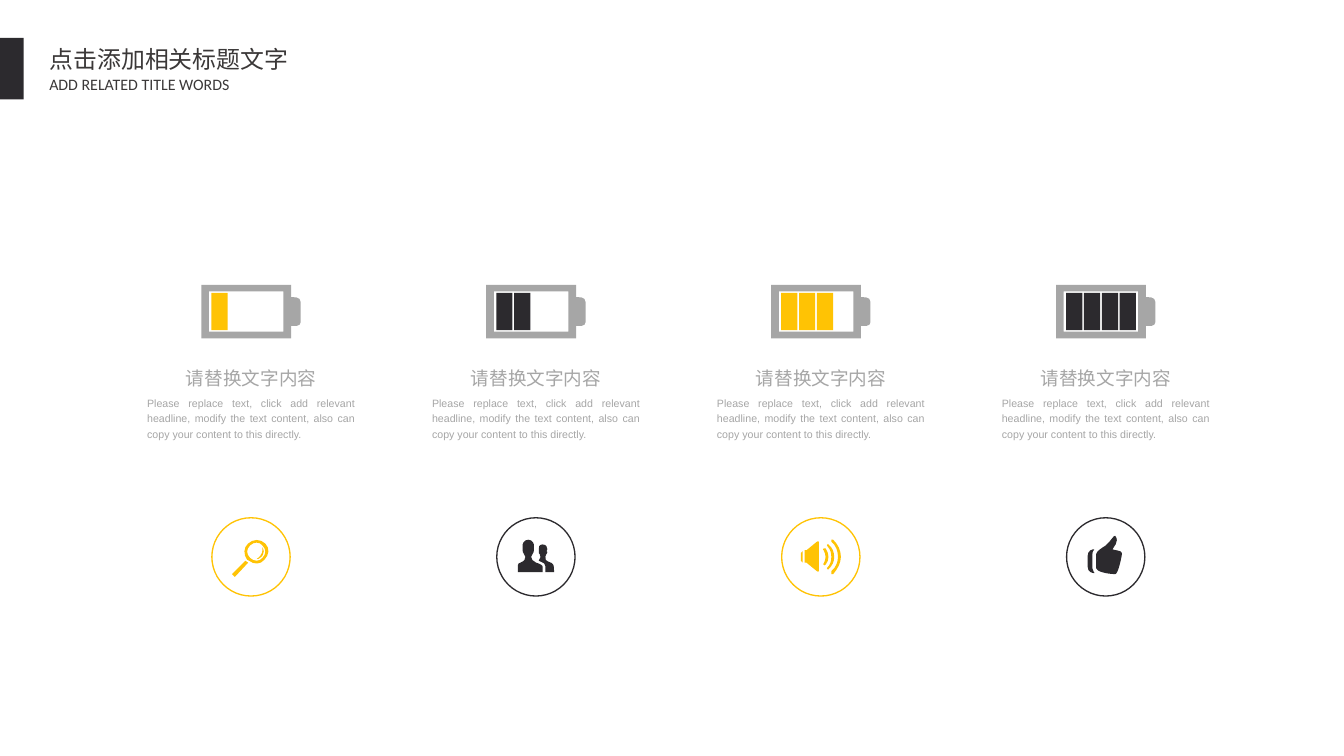
from dataclasses import dataclass

from lxml import etree
from pptx import Presentation
from pptx.dml.color import RGBColor
from pptx.enum import shapes as sh, text as tx
from pptx.oxml import ns
from pptx.util import Cm, Pt


@dataclass(frozen=True)
class Theme:
    dark: str = "2C2A2E"
    gold: str = "FFC304"
    grey: str = "A6A6A6"
    ink: str = "3B3838"
    han: str = "Noto Sans CJK SC"
    title: int = 18
    sub: int = 12
    head: int = 14
    body: int = 8


T = Theme()
LEFT, MID, JUST = tx.PP_ALIGN.LEFT, tx.PP_ALIGN.CENTER, tx.PP_ALIGN.JUSTIFY

# Rings: a start point, then lines (x, y) or curves (x1, y1, x2, y2, x, y).
# A part is a list of rings, an icon a list of parts.
CASE = [
    [(94, 13), (94, 0), (0, 0), (0, 56), (94, 56), (94, 43), (97, 43, 104, 44, 104, 39),
     (104, 18), (104, 12, 96, 13, 94, 13)],
    [(86, 49), (8, 49), (8, 7), (86, 7)],
]
SEARCH = [
    # lens, handle, glint
    [[(56, 27), (51, 22, 43, 22, 38, 27), (33, 31, 33, 39, 37, 44), (38, 45, 38, 45, 39, 45),
      (44, 49, 51, 49, 55, 44), (60, 39, 61, 32, 56, 27)],
     [(53, 42), (50, 46, 44, 46, 40, 42), (36, 38, 36, 33, 40, 29),
      (44, 25, 50, 25, 53, 29), (57, 33, 57, 38, 53, 42)]],
    [[(21, 59), (24, 62), (38, 47), (35, 45)]],
    [[(53, 31), (54, 40, 47, 43, 47, 43), (49, 43), (58, 38, 53, 31, 53, 31)]],
]
PEOPLE = [[
    [(60, 57), (60, 57, 60, 49, 59, 49), (59, 48, 57, 47, 54, 46), (51, 45, 51, 44, 51, 41),
     (51, 40, 51, 41, 52, 38), (52, 37, 53, 38, 53, 36), (53, 35, 52, 35, 52, 35),
     (52, 35, 53, 34, 53, 33), (53, 31, 52, 28, 48, 28), (44, 28, 44, 31, 44, 33),
     (44, 36), (44, 38, 44, 37, 45, 38), (45, 41, 46, 40, 46, 41), (46, 43, 45, 44, 44, 45),
     (50, 48, 51, 48, 51, 51), (51, 57)],
    [(41, 47), (38, 45, 36, 44, 36, 41), (36, 39, 37, 40, 38, 37), (38, 36, 39, 37, 39, 34),
     (39, 29), (39, 28, 38, 23, 33, 23), (28, 23, 27, 28, 27, 29), (27, 34),
     (27, 37, 28, 36, 28, 37), (29, 40, 30, 39, 30, 41), (30, 44, 29, 45, 25, 47),
     (24, 47, 22, 48, 22, 50), (22, 57), (48, 57), (48, 57, 48, 53, 48, 51),
     (48, 50, 45, 48, 41, 47)],
]]
SOUND = [
    # cone, back, three waves
    [[(37, 25), (26, 34), (24, 34), (24, 47), (26, 47), (37, 56), (37, 56, 39, 57, 39, 56),
      (39, 25), (39, 24, 37, 25, 37, 25)]],
    [[(20, 37), (20, 45), (20, 46, 21, 46, 22, 47), (22, 35), (21, 36, 20, 36, 20, 37)]],
    [[(46, 32), (45, 32, 44, 32, 44, 32), (43, 33, 43, 34, 44, 34), (45, 36, 46, 39, 46, 41),
      (46, 43, 45, 46, 44, 48), (43, 48, 43, 49, 44, 49), (44, 50, 45, 50, 46, 49),
      (48, 47, 49, 44, 49, 41), (49, 38, 48, 35, 46, 32)]],
    [[(49, 28), (49, 27, 48, 27, 48, 28), (47, 28, 47, 29, 48, 30), (51, 33, 52, 37, 52, 41),
      (52, 45, 51, 49, 48, 52), (47, 52, 47, 53, 48, 54), (49, 54),
      (53, 50, 55, 46, 55, 41), (55, 36, 53, 31, 49, 28)]],
    [[(54, 23), (54, 23, 53, 23, 52, 23), (52, 24, 52, 24, 52, 25), (57, 29, 59, 35, 59, 41),
      (59, 46, 57, 52, 52, 56), (52, 57, 52, 58, 52, 59), (54, 59),
      (59, 53, 62, 47, 62, 41), (62, 34, 59, 28, 54, 23)]],
]
THUMB = [[
    [(48, 33), (48, 32, 56, 25, 51, 19), (50, 17, 46, 25, 41, 29), (38, 31, 31, 35, 31, 38),
     (31, 53), (31, 56, 42, 59, 51, 59), (54, 59, 58, 40, 58, 37), (58, 34, 49, 34, 48, 33)],
    [(29, 33), (27, 33, 22, 34, 22, 40), (22, 51), (22, 57, 27, 58, 29, 58),
     (30, 58, 27, 56, 27, 53), (27, 38), (27, 34, 30, 33, 29, 33)],
]]


def paint(shape, fill=None, line=None):
    shape.shadow.inherit = False
    for part, color in ((shape.fill, fill), (shape.line.fill, line)):
        if color:
            part.solid()
            part.fore_color.rgb = RGBColor.from_string(color)
        else:
            part.background()


def outline(group, x, y, unit, rings, color):
    pen = None
    for ring in rings:
        pts = [(x + s[k] * unit, y + s[k + 1] * unit)
               for s in ring for k in range(0, len(s), 2)]
        if pen:
            pen.move_to(*pts[0])
        else:
            pen = group.shapes.build_freeform(*pts[0])
        pen.add_line_segments(pts[1:], close=True)
    shape = pen.convert_to_shape()
    # join each run of three points into one curve
    steps = iter(list(shape._element.iter(ns.qn("a:lnTo"))))
    for seg in (s for ring in rings for s in ring[1:]):
        step = next(steps)
        if len(seg) == 6:
            curve = etree.Element(ns.qn("a:cubicBezTo"))
            step.addprevious(curve)
            for node in (step, next(steps), next(steps)):
                curve.append(node[0])
                node.getparent().remove(node)
    paint(shape, color)


def write(box, words, size, color, font, align=LEFT, space=1.0):
    frame = box.text_frame
    look = {"word_wrap": True, "auto_size": tx.MSO_AUTO_SIZE.NONE,
            "vertical_anchor": tx.MSO_ANCHOR.TOP}
    para = frame.paragraphs[0]
    run = para.add_run()
    run.text = words
    run.font.color.rgb = RGBColor.from_string(color)
    for item, form in ((frame, look), (para, {"alignment": align, "line_spacing": space}),
                       (run.font, {"size": Pt(size), "name": font})):
        for key, val in form.items():
            setattr(item, key, val)
    east = etree.SubElement(run.font._element, ns.qn("a:ea"))
    east.set("typeface", T.han)


def header(slide, x, y, w):
    bar = slide.shapes.add_shape(sh.MSO_SHAPE.RECTANGLE, 0, y - Cm(0.05), Cm(0.63), Cm(1.63))
    paint(bar, T.dark)
    title = slide.shapes.title
    form = {"left": x, "top": y, "width": w, "height": Cm(1.04)}
    for key, val in form.items():
        setattr(title, key, val)
    write(title, "点击添加相关标题文字", T.title, T.ink, T.han)
    sub = slide.shapes.add_textbox(x, y + Cm(0.8), Cm(6.53), Cm(0.79))
    write(sub, "ADD RELATED TITLE WORDS", T.sub, T.ink, "Calibri")


def battery(slide, x, y, w, count, color):
    group = slide.shapes.add_group_shape()
    unit = w / 104
    outline(group, x, y, unit, CASE, T.grey)
    for n in range(count):
        box = (10.5 + 18.7 * n, 8.4, 17, 39)
        cx, cy, cw, ch = (round(v * unit) for v in box)
        cell = group.shapes.add_shape(sh.MSO_SHAPE.RECTANGLE, x + cx, y + cy, cw, ch)
        paint(cell, color)


def badge(slide, x, y, size, icon, color):
    group = slide.shapes.add_group_shape()
    ring = group.shapes.add_shape(sh.MSO_SHAPE.OVAL, x, y, size, size)
    paint(ring, line=color)
    ring.line.width = Pt(1)
    for part in icon:
        outline(group, x, y, size / 82, part, color)


def column(slide, x, y, w, count, icon, color):
    battery(slide, x + Cm(1.69), y, Cm(2.64), count, color)
    head = slide.shapes.add_textbox(x, y + Cm(1.93), w, Cm(1))
    write(head, "请替换文字内容", T.head, T.grey, "Arial", MID, 1.2)
    body = slide.shapes.add_textbox(x, y + Cm(2.79), w, Cm(2.2))
    write(body, "Please replace text, click add relevant headline, modify the text content, "
          "also can copy your content to this directly.", T.body, T.grey, "Arial", JUST, 1.2)
    badge(slide, x + Cm(1.97), y + Cm(6.19), Cm(2.08), icon, color)


def main():
    deck = Presentation()
    deck.slide_width, deck.slide_height = Cm(35.71), Cm(20.09)
    slide = deck.slides.add_slide(deck.slide_layouts[5])
    header(slide, Cm(1.06), Cm(1.06), Cm(6.96))
    for n, icon in enumerate((SEARCH, PEOPLE, SOUND, THUMB)):
        color = T.dark if n % 2 else T.gold
        column(slide, Cm(3.66 + 7.57 * n), Cm(7.57), Cm(6.03), n + 1, icon, color)
    deck.save("out.pptx")


if __name__ == "__main__":
    main()
